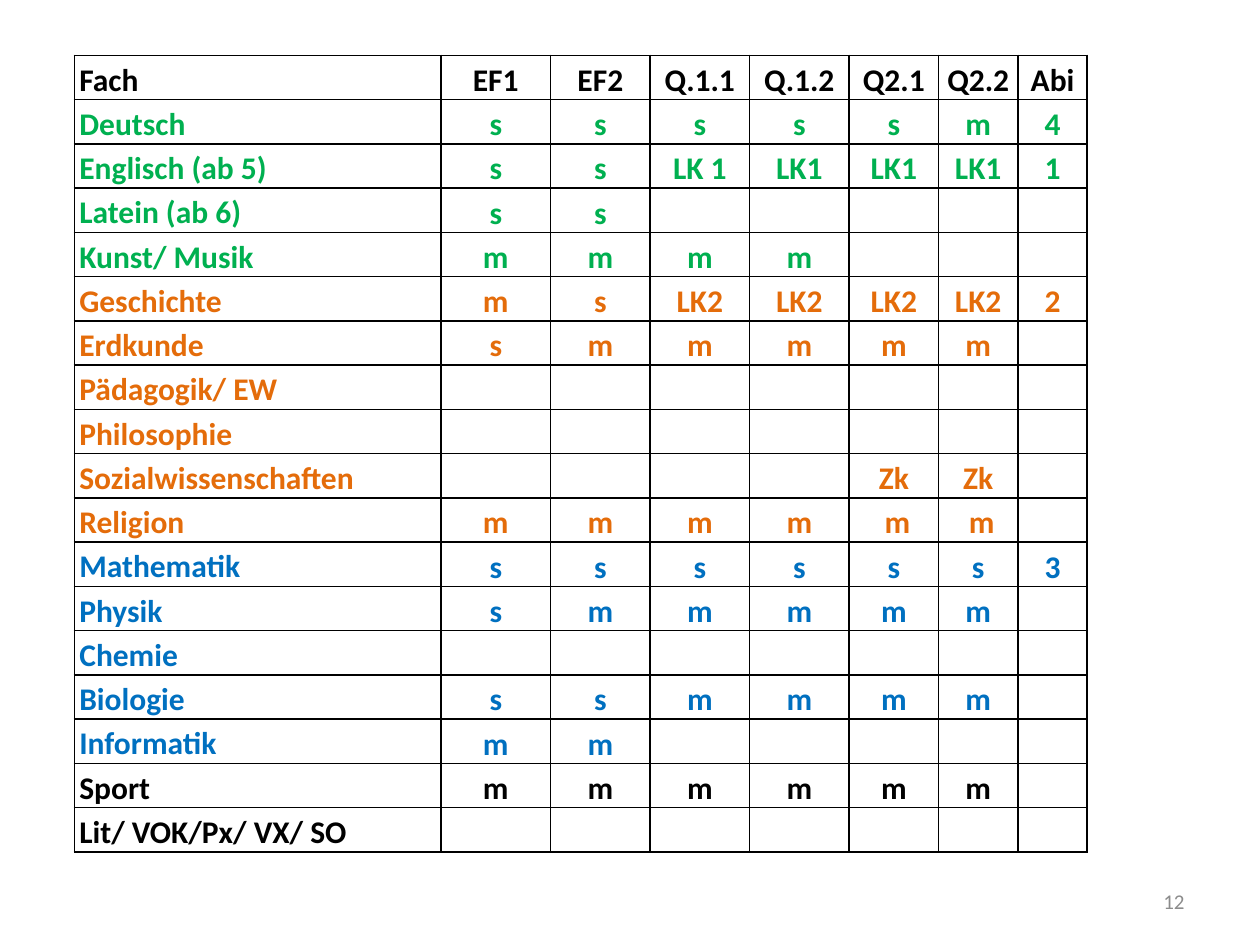
import pptx
import pptx.util
import pptx.dml.color
import pptx.enum.text
import pptx.oxml
import pptx.oxml.ns

Inches = pptx.util.Inches
ALIGN = pptx.enum.text.PP_ALIGN
MIDDLE = pptx.enum.text.MSO_ANCHOR.MIDDLE
TOP = pptx.enum.text.MSO_ANCHOR.TOP
BLACK, GREEN, ORANGE, BLUE, GREY = "000000", "00B050", "E46C0A", "0070C0", "8C8C8C"


def write(para, text, color, size, bold):
    span = para.add_run()
    span.text = text
    span.font.color.rgb = pptx.dml.color.RGBColor.from_string(color)
    values = {"name": "Calibri", "size": pptx.util.Pt(size), "bold": bold}
    for name, value in values.items():
        setattr(span.font, name, value)


def add_borders(cell, color, points):
    for side in ("lnL", "lnR", "lnT", "lnB"):
        cell._tc.get_or_add_tcPr().append(pptx.oxml.parse_xml(
            f'<a:{side} {pptx.oxml.ns.nsdecls("a")} w="{points * 12700}">'
            f'<a:solidFill><a:srgbClr val="{color}"/></a:solidFill></a:{side}>'))


# Subjects grouped by field, one colour per field
groups = [
    (BLACK, ["Fach|EF1|EF2|Q.1.1|Q.1.2|Q2.1|Q2.2|Abi"]),
    (GREEN, ["Deutsch|s|s|s|s|s|m|4",
             "Englisch (ab 5)|s|s|LK 1|LK1|LK1|LK1|1",
             "Latein (ab 6)|s|s|||||",
             "Kunst/ Musik|m|m|m|m|||"]),
    (ORANGE, ["Geschichte|m|s|LK2|LK2|LK2|LK2|2",
              "Erdkunde|s|m|m|m|m|m|",
              "Pädagogik/ EW|||||||",
              "Philosophie|||||||",
              "Sozialwissenschaften|||||Zk|Zk|",
              "Religion|m|m|m|m| m| m|"]),
    (BLUE, ["Mathematik|s|s|s|s|s|s|3",
            "Physik|s|m|m|m|m|m|",
            "Chemie|||||||",
            "Biologie|s|s|m|m|m|m|",
            "Informatik|m|m|||||"]),
    (BLACK, ["Sport|m|m|m|m|m|m|",
             "Lit/ VOK/Px/ VX/ SO|||||||"]),
]
rows = [(color, line.split("|")) for color, lines in groups for line in lines]
column_widths = [2.91, 0.87, 0.79, 0.79, 0.79, 0.71, 0.63, 0.55]

# Slide
deck = pptx.Presentation()
deck.slide_width, deck.slide_height = Inches(10), Inches(7.5)
page = deck.slides.add_slide(deck.slide_layouts[6])

# Course plan table
table = page.shapes.add_table(
    len(rows), len(column_widths), Inches(0.59), Inches(0.44),
    Inches(sum(column_widths)), Inches(0.35 * len(rows))).table
table.first_row = table.horz_banding = False
for column, width in zip(table.columns, column_widths):
    column.width = Inches(width)

for r, (color, texts) in enumerate(rows):
    for c, text in enumerate(texts):
        cell = table.cell(r, c)
        add_borders(cell, BLACK, 1)
        cell.fill.background()
        cell_format = {"margin_left": Inches(0.04), "margin_right": Inches(0.04),
                       "margin_top": 0, "margin_bottom": 0,
                       "vertical_anchor": MIDDLE if c else TOP}
        for name, value in cell_format.items():
            setattr(cell, name, value)
        para = cell.text_frame.paragraphs[0]
        para.line_spacing = 1.15
        para.alignment = ALIGN.CENTER if c else ALIGN.LEFT
        if text:
            write(para, text, color, 18, True)

# Page number
box = page.shapes.add_textbox(Inches(7.17), Inches(6.95), Inches(2.33), Inches(0.4))
box.text_frame.word_wrap = True
box.text_frame.vertical_anchor = MIDDLE
para = box.text_frame.paragraphs[0]
para.alignment = ALIGN.RIGHT
write(para, "12", GREY, 12, False)

deck.save("out.pptx")
